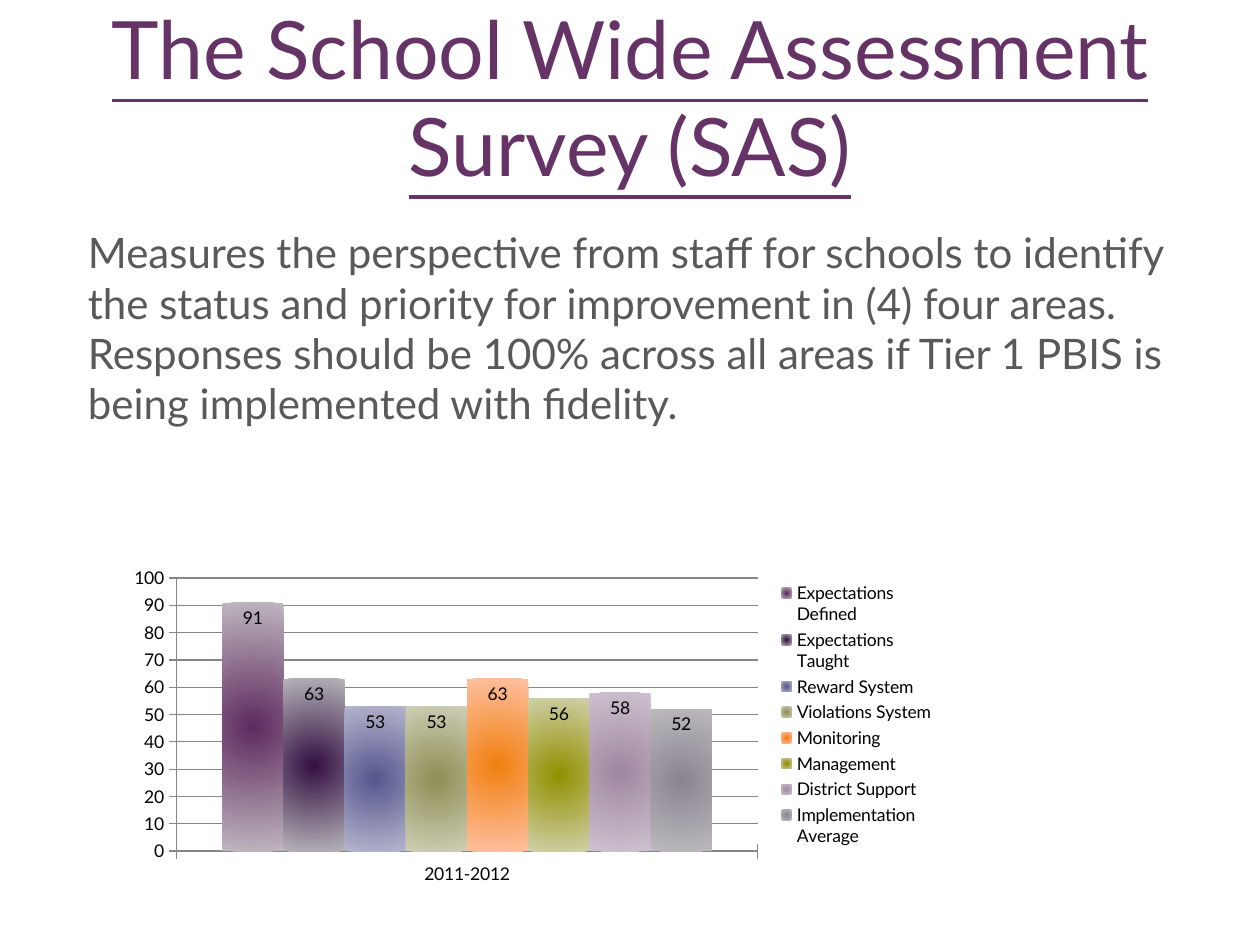
from pptx import Presentation
from pptx.chart.data import CategoryChartData
from pptx.dml.color import RGBColor
from pptx.enum.chart import XL_CHART_TYPE, XL_LABEL_POSITION, XL_LEGEND_POSITION, XL_TICK_MARK
from pptx.enum.text import MSO_ANCHOR, MSO_AUTO_SIZE, PP_ALIGN
from pptx.oxml import parse_xml
from pptx.oxml.ns import nsdecls
from pptx.util import Inches, Pt

COLUMNS = XL_CHART_TYPE.COLUMN_CLUSTERED
INSIDE_END = XL_LABEL_POSITION.INSIDE_END
LEGEND_RIGHT = XL_LEGEND_POSITION.RIGHT
TICK_CROSS, TICK_NONE = XL_TICK_MARK.CROSS, XL_TICK_MARK.NONE
BOTTOM = MSO_ANCHOR.BOTTOM
NO_AUTOFIT = MSO_AUTO_SIZE.NONE
CENTER, LEFT = PP_ALIGN.CENTER, PP_ALIGN.LEFT

FONT = "Lato"
PURPLE, GREY, BLACK, AXIS = "663366", "595959", "000000", "868686"
TITLE = "The School Wide Assessment Survey (SAS)"
SUMMARY = (
    "Measures the perspective from staff for schools to identify the status and "
    "priority for improvement in (4) four areas. Responses should be 100% across "
    "all areas if Tier 1 PBIS is being implemented with fidelity."
)
SURVEY_AREAS = [
    ("Expectations Defined", 91, "5E2A5E", "BFB5BF"),
    ("Expectations Taught", 63, "330F42", "B5B3B8"),
    ("Reward System", 53, "56568E", "B5B5CE"),
    ("Violations System", 53, "8E8E56", "CECEB5"),
    ("Monitoring", 63, "F08010", "FFC0A0"),
    ("Management", 56, "929000", "D0D0A8"),
    ("District Support", 58, "A088A0", "CDC0CF"),
    ("Implementation Average", 52, "8A8490", "BBB9BD"),
]


def rgb(value):
    """Return the colour for a hex string."""
    return RGBColor.from_string(value)


def style_font(font, size, color):
    """Set typeface, size and colour of a font."""
    font.name = FONT
    font.size = Pt(size)
    font.color.rgb = rgb(color)


def fill_text(frame, text, size, color, align):
    """Put one wrapped, formatted paragraph in a text frame."""
    frame.text = text
    frame.word_wrap = True
    frame.auto_size = NO_AUTOFIT
    paragraph = frame.paragraphs[0]
    paragraph.alignment = align
    style_font(paragraph.runs[0].font, size, color)


def place_title(slide, box):
    """Place the underlined heading in its box."""
    title = slide.shapes.title
    title.left, title.top, title.width, title.height = box
    fill_text(title.text_frame, TITLE, 46, PURPLE, CENTER)
    title.text_frame.vertical_anchor = BOTTOM
    title.text_frame.paragraphs[0].runs[0].font.underline = True


def place_summary(slide, box):
    """Place the description of the survey in its box."""
    summary = slide.shapes.add_textbox(*box)
    fill_text(summary.text_frame, SUMMARY, 24, GREY, LEFT)


def set_layout(parent, index, bounds, target=""):
    """Fix a chart part at fractions of the chart area."""
    for old in parent.xpath("c:layout"):
        parent.remove(old)
    sizes = "".join(f'<c:{key} val="{value}"/>' for key, value in zip("xywh", bounds))
    parent.insert(index, parse_xml(
        f'<c:layout {nsdecls("c")}><c:manualLayout>{target}'
        f'<c:xMode val="edge"/><c:yMode val="edge"/>{sizes}'
        "</c:manualLayout></c:layout>"
    ))


def make_radial(gradient):
    """Turn a linear gradient into one that spreads from the centre."""
    for direction in gradient.xpath("a:lin"):
        gradient.remove(direction)
    gradient.append(parse_xml(
        f'<a:path {nsdecls("a")} path="circle">'
        '<a:fillToRect l="50000" t="50000" r="50000" b="50000"/></a:path>'
    ))


def style_series(series, center, edge):
    """Colour one survey area and label its value."""
    fill = series.format.fill
    fill.gradient()
    for stop, color, position in zip(fill.gradient_stops, (center, edge), (0, 1)):
        stop.color.rgb = rgb(color)
        stop.position = position
    labels = series.data_labels
    labels.show_value = True
    labels.position = INSIDE_END
    style_font(labels.font, 10, BLACK)


def style_axis(axis):
    """Give an axis crossing ticks and a grey line."""
    axis.major_tick_mark = TICK_CROSS
    axis.minor_tick_mark = TICK_NONE
    axis.format.line.color.rgb = rgb(AXIS)
    style_font(axis.tick_labels.font, 10, BLACK)


def place_chart(slide, box):
    """Place the column chart of survey results in its box."""
    results = CategoryChartData()
    results.categories = ["2011-2012"]
    for name, score, *_ in SURVEY_AREAS:
        results.add_series(name, [score])
    chart = slide.shapes.add_chart(COLUMNS, *box, results).chart
    chart.has_title = False
    style_font(chart.font, 10, BLACK)

    columns = chart.plots[0]
    columns.vary_by_categories = False
    columns.gap_width = 150
    columns.overlap = 0
    for series, (_, _, center, edge) in zip(columns.series, SURVEY_AREAS):
        style_series(series, center, edge)
    for gradient in chart.element.xpath(".//a:gradFill"):
        make_radial(gradient)

    for axis in (chart.category_axis, chart.value_axis):
        style_axis(axis)
    scores = chart.value_axis
    scores.minimum_scale, scores.maximum_scale, scores.major_unit = 0, 100, 10
    scores.has_major_gridlines = True
    scores.major_gridlines.format.line.color.rgb = rgb(AXIS)

    chart.has_legend = True
    chart.legend.position = LEGEND_RIGHT
    chart.legend.include_in_layout = False
    style_font(chart.legend.font, 10, BLACK)
    plot_area = chart.element.xpath(".//c:plotArea")[0]
    legend = chart.element.xpath(".//c:legend")[0]
    set_layout(plot_area, 0, (0.06, 0.05, 0.71, 0.85), '<c:layoutTarget val="inner"/>')
    set_layout(legend, 1, (0.79, 0.05, 0.2, 0.85))


def main():
    """Build and save the slide."""
    deck = Presentation()
    deck.slide_width, deck.slide_height = Inches(10), Inches(7.5)
    slide = deck.slides.add_slide(deck.slide_layouts[5])
    left, width = Inches(0.6), Inches(8.8)
    place_title(slide, (left, Inches(0.12), width, Inches(1.46)))
    place_summary(slide, (left, Inches(1.75), width, Inches(4.75)))
    place_chart(slide, (Inches(1.01), Inches(4.46), Inches(6.5), Inches(2.56)))
    deck.save("out.pptx")


if __name__ == "__main__":
    main()
